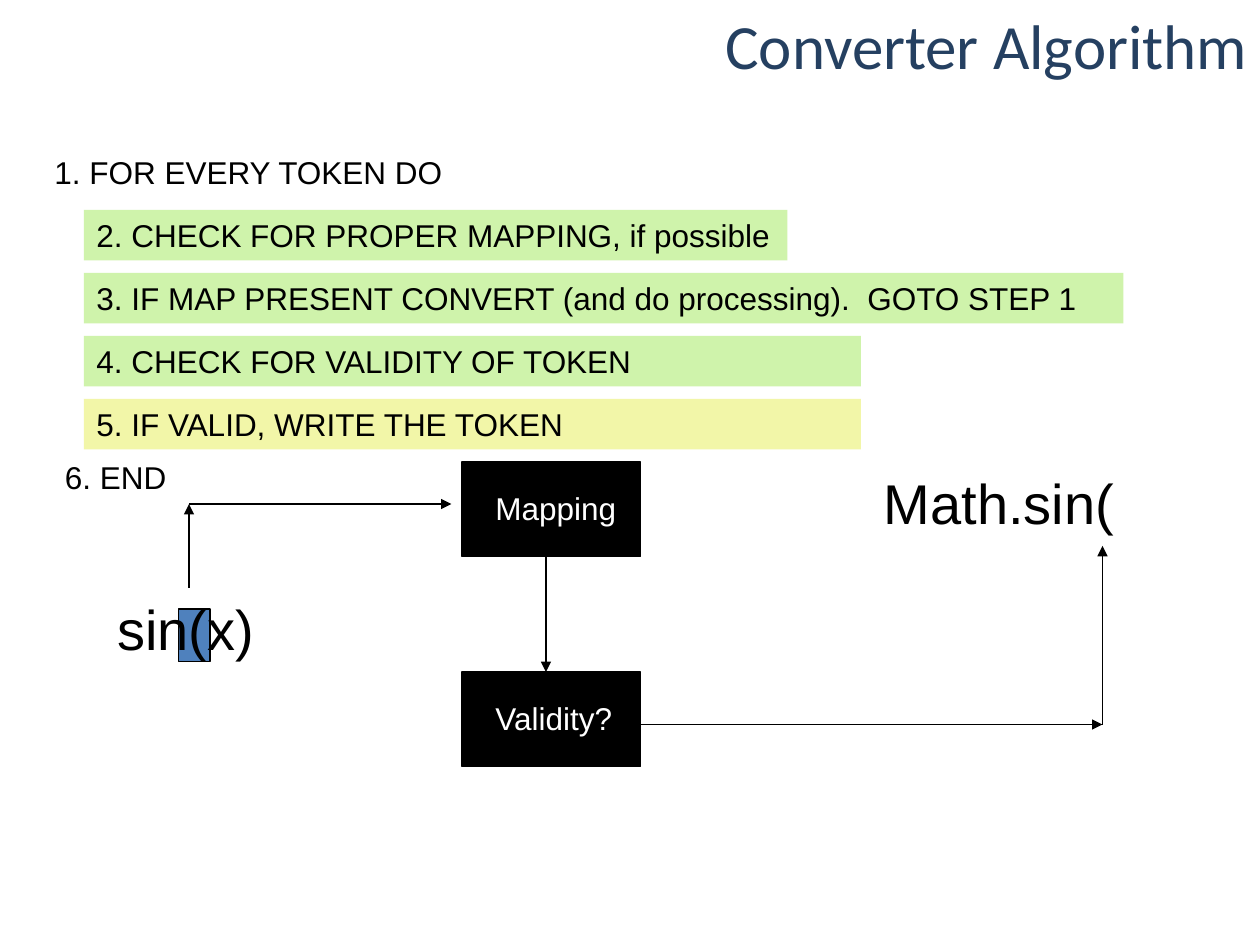
from dataclasses import dataclass

from lxml.etree import SubElement
from pptx import Presentation
from pptx.dml.color import RGBColor
from pptx.enum.shapes import MSO_CONNECTOR, MSO_SHAPE
from pptx.enum.text import PP_ALIGN
from pptx.oxml.ns import qn
from pptx.util import Inches, Pt


@dataclass(frozen=True)
class Theme:
    body_font: str = "Arial"
    title_font: str = "Calibri"
    body_size: int = 18
    code_size: int = 32
    title_size: int = 36
    line_width: float = 0.75
    black: str = "000000"
    white: str = "FFFFFF"
    navy: str = "254061"
    blue: str = "4F81BD"
    green: str = "CFF3AB"
    yellow: str = "F2F6A8"


THEME = Theme()
TEXT_ROWS = 4.8
CODE_ROWS = 7.6


def grid(*units):
    """Turn grid units, twelve to the inch, into lengths."""
    return [Inches(unit / 12) for unit in units]


def paint(fill, color):
    fill.solid()
    fill.fore_color.rgb = RGBColor.from_string(color)


def add_text(page, text, place, size=THEME.body_size, color=THEME.black,
             font=THEME.body_font, align=PP_ALIGN.LEFT, fill=None):
    box = page.shapes.add_textbox(*grid(*place))
    if fill:
        paint(box.fill, fill)
    box.text_frame.word_wrap = True
    para = box.text_frame.paragraphs[0]
    para.text = text
    para.alignment = align
    para.font.name = font
    para.font.size = Pt(size)
    para.font.color.rgb = RGBColor.from_string(color)


def add_block(page, place, color):
    block = page.shapes.add_shape(MSO_SHAPE.RECTANGLE, *grid(*place))
    block.shadow.inherit = False
    paint(block.fill, color)
    paint(block.line.fill, THEME.black)
    block.line.width = Pt(THEME.line_width)


def add_stage(page, name, column, row):
    """Add a black block with its name in white."""
    add_block(page, (column, row, 17, 9), THEME.black)
    add_text(page, name, (column + 2, row + 2, 21, TEXT_ROWS), color=THEME.white)


def add_arrow(page, start, end):
    arrow = page.shapes.add_connector(MSO_CONNECTOR.STRAIGHT, *grid(*start, *end))
    paint(arrow.line.fill, THEME.black)
    arrow.line.width = Pt(THEME.line_width)
    SubElement(arrow.line._get_or_add_ln(), qn("a:tailEnd"), type="triangle")
    SubElement(arrow._element.spPr, qn("a:effectLst"))


def add_steps(page):
    add_text(page, "1. FOR EVERY TOKEN DO", (4, 14, 74, TEXT_ROWS))
    inner_steps = [
        ("2. CHECK FOR PROPER MAPPING, if possible", 67, THEME.green),
        ("3. IF MAP PRESENT CONVERT (and do processing).  GOTO STEP 1", 99, THEME.green),
        ("4. CHECK FOR VALIDITY OF TOKEN", 74, THEME.green),
        ("5. IF VALID, WRITE THE TOKEN", 74, THEME.yellow),
    ]
    for index, (text, columns, fill) in enumerate(inner_steps):
        add_text(page, text, (8, 20 + 6 * index, columns, TEXT_ROWS), fill=fill)
    add_text(page, "6. END", (5, 43, 74, TEXT_ROWS))


def add_flow(page):
    add_block(page, (17, 58, 3, 5), THEME.blue)
    add_text(page, "sin(x)", (10, 56, 35, CODE_ROWS), THEME.code_size)
    add_text(page, "Math.sin(", (83, 44, 25, CODE_ROWS), THEME.code_size)
    add_stage(page, "Mapping", 44, 44)
    add_stage(page, "Validity?", 44, 64)
    for start, end in [
        ((18, 56), (18, 48)),
        ((18, 48), (43, 48)),
        ((52, 53), (52, 64)),
        ((61, 69), (105, 69)),
        ((105, 69), (105, 52)),
    ]:
        add_arrow(page, start, end)


def main():
    deck = Presentation()
    deck.slide_width, deck.slide_height = grid(120, 90)
    page = deck.slides.add_slide(deck.slide_layouts[6])
    add_steps(page)
    add_flow(page)
    add_text(page, "Converter Algorithm", (33, 0, 87, 8.5), THEME.title_size,
             THEME.navy, THEME.title_font, PP_ALIGN.RIGHT)
    deck.save("out.pptx")


if __name__ == "__main__":
    main()
